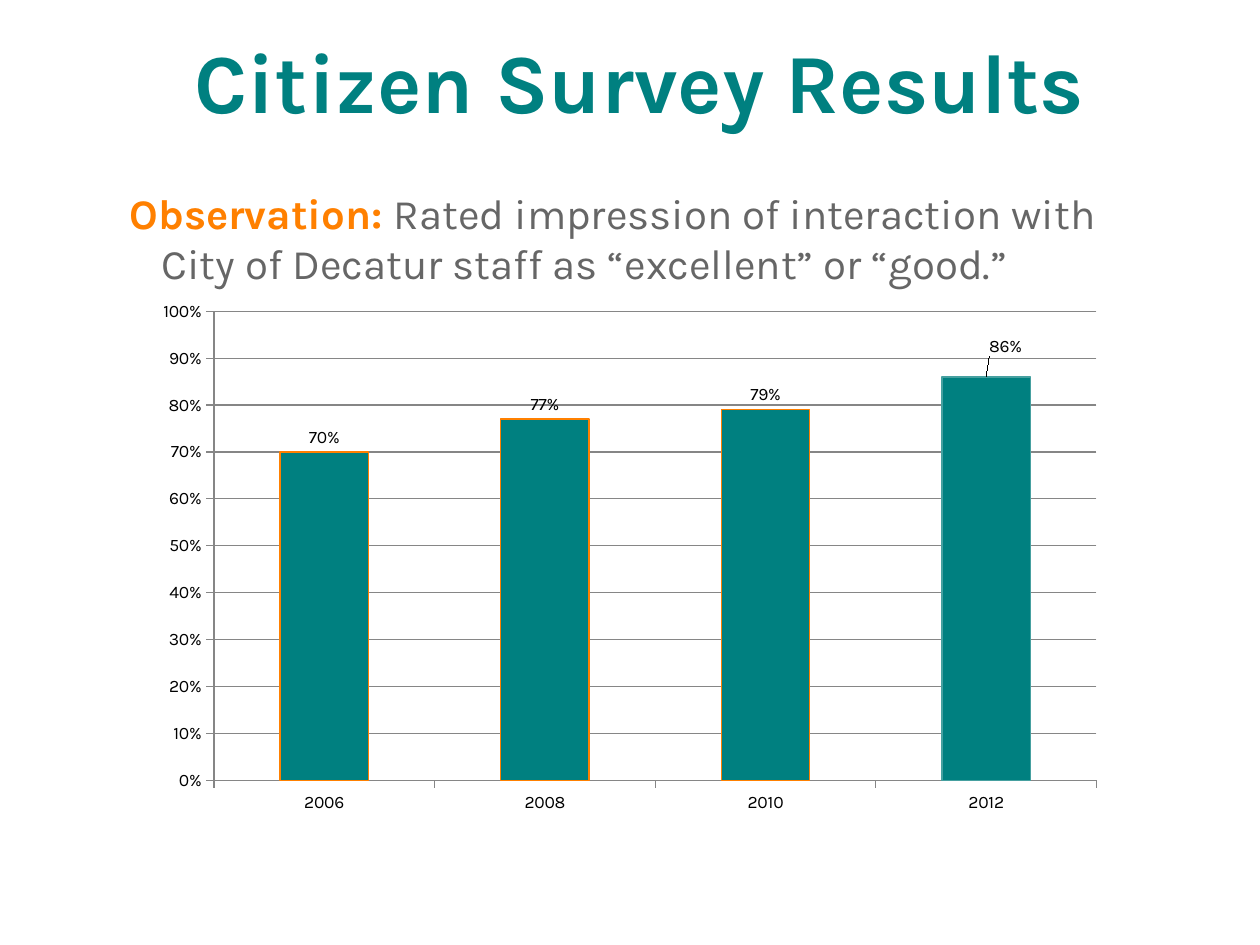
import pptx
import pptx.chart.data
import pptx.dml.color
import pptx.enum.chart
import pptx.enum.text
import pptx.oxml
import pptx.util
from dataclasses import dataclass
from lxml import etree

SCALE = 914400 / 126
C_NS = "http://schemas.openxmlformats.org/drawingml/2006/chart"


@dataclass
class Theme:
    face: str = "Karla"
    teal: str = "008080"
    orange: str = "FF8000"
    gray: str = "666666"
    rule: str = "868686"
    edge: str = "46A0A0"
    black: str = "000000"
    head: int = 48
    body: int = 24
    note: int = 10


def px(n):
    return pptx.util.Emu(round(n * SCALE))


def rgb(code):
    return pptx.dml.color.RGBColor.from_string(code)


def layout(**parts):
    """Make a manual chart layout from its named parts."""
    root = etree.Element(f"{{{C_NS}}}layout", nsmap={"c": C_NS})
    man = etree.SubElement(root, f"{{{C_NS}}}manualLayout")
    for name, val in parts.items():
        etree.SubElement(man, f"{{{C_NS}}}{name}").set("val", str(val))
    return pptx.oxml.parse_xml(etree.tostring(root))


class Deck:
    def __init__(self, theme):
        self.theme = theme
        self.prs = pptx.Presentation()
        self.prs.slide_width = px(1260)
        self.prs.slide_height = px(945)
        self.slide = self.prs.slides.add_slide(self.prs.slide_layouts[1])

    def place(self, shape, box):
        shape.left, shape.top, shape.width, shape.height = map(px, box)
        frame = shape.text_frame
        frame.word_wrap = True
        frame.auto_size = pptx.enum.text.MSO_AUTO_SIZE.NONE
        frame.vertical_anchor = pptx.enum.text.MSO_ANCHOR.TOP
        return frame

    def style(self, font, size, color, bold=False):
        font.name = self.theme.face
        font.size = pptx.util.Pt(size)
        font.bold = bold
        font.color.rgb = rgb(color)

    def title(self, text, box):
        frame = self.place(self.slide.shapes.title, box)
        frame.text = text
        para = frame.paragraphs[0]
        para.alignment = pptx.enum.text.PP_ALIGN.CENTER
        self.style(para.runs[0].font, self.theme.head, self.theme.teal, True)

    def body(self, lead, text, box):
        frame = self.place(self.slide.placeholders[1], box)
        frame.text = lead
        para = frame.paragraphs[0]
        para.space_before = pptx.util.Pt(0)
        # Hanging indent without a bullet
        props = para._p.get_or_add_pPr()
        props.set("marL", str(px(32)))
        props.set("indent", str(-px(32)))
        etree.SubElement(props, pptx.oxml.ns.qn("a:buNone"))
        para.add_run().text = text
        first, rest = para.runs
        self.style(first.font, self.theme.body, self.theme.orange, True)
        self.style(rest.font, self.theme.body, self.theme.gray)

    def line(self, form, color):
        form.line.color.rgb = rgb(color)
        form.line.width = pptx.util.Pt(0.75)

    def chart(self, cats, vals, box):
        kinds = pptx.enum.chart
        data = pptx.chart.data.CategoryChartData(number_format="0%")
        data.categories = cats
        data.add_series("Series 1", vals)
        chart = self.slide.shapes.add_chart(
            kinds.XL_CHART_TYPE.COLUMN_CLUSTERED, *map(px, box), data).chart
        chart.has_legend = chart.has_title = False
        self.style(chart.font, self.theme.note, self.theme.black)

        # Axes
        for axis in (chart.category_axis, chart.value_axis):
            axis.major_tick_mark = kinds.XL_TICK_MARK.OUTSIDE
            self.line(axis.format, self.theme.rule)
        axis = chart.value_axis
        axis.minimum_scale, axis.maximum_scale, axis.major_unit = 0, 1, 0.1
        axis.tick_labels.number_format = "0%"
        axis.tick_labels.number_format_is_linked = False
        self.line(axis.major_gridlines.format, self.theme.rule)

        # Columns and labels
        plot = chart.plots[0]
        plot.gap_width = 150
        plot.vary_by_categories = False
        bars = plot.series[0]
        bars.format.fill.solid()
        bars.format.fill.fore_color.rgb = rgb(self.theme.teal)
        self.line(bars.format, self.theme.orange)
        tags = bars.data_labels
        tags.show_value = True
        tags.number_format = "0%"
        tags.number_format_is_linked = False
        tags.position = kinds.XL_LABEL_POSITION.OUTSIDE_END
        self.style(tags.font, self.theme.note, self.theme.black)

        # Last column: own edge and a shifted label
        last = bars.points[len(vals) - 1]
        last.format.fill.solid()
        last.format.fill.fore_color.rgb = rgb(self.theme.teal)
        self.line(last.format, self.theme.edge)
        tag = last.data_label
        tag.position = kinds.XL_LABEL_POSITION.OUTSIDE_END
        self.style(tag.font, self.theme.note, self.theme.black)
        idx = tags._element.find(f"{{{C_NS}}}dLbl/{{{C_NS}}}idx")
        idx.addnext(layout(x=0.02, y=-0.03))

        # Plot area
        area = chart._chartSpace.chart.plotArea
        for old in area.findall(f"{{{C_NS}}}layout"):
            area.remove(old)
        area.insert(0, layout(layoutTarget="inner", xMode="edge", yMode="edge",
                              x=0.07, y=0.04, w=0.91, h=0.88))


def main():
    deck = Deck(Theme())
    deck.title("Citizen Survey Results", (180, 23, 919, 149))
    deck.body("Observation: ",
              "Rated impression of interaction with City of Decatur staff "
              "as “excellent” or “good.”", (117, 181, 1023, 185))
    deck.chart(("2006", "2008", "2010", "2012"), (0.7, 0.77, 0.79, 0.86),
               (146, 290, 970, 533))
    deck.prs.save("out.pptx")


if __name__ == "__main__":
    main()
